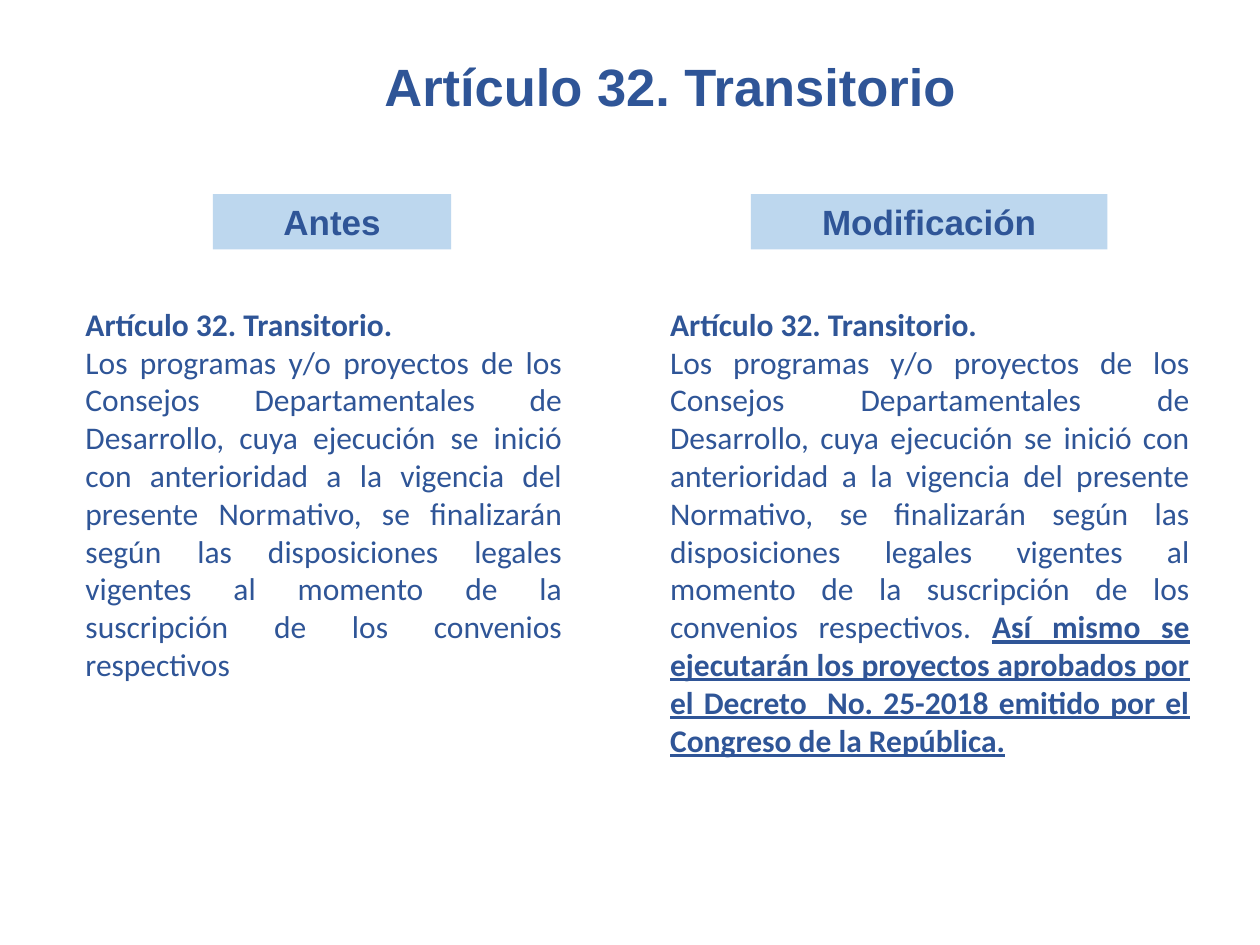
from pptx import Presentation, util as u
from pptx.dml.color import RGBColor
from pptx.enum import shapes, text

WIDTH, HEIGHT = u.Inches(10), u.Inches(7.5)
BLUE, PALE_BLUE = "2F5597", "BDD7EE"
TITLE = "Artículo 32. Transitorio"
ARTICLE = (
    "Los programas y/o proyectos de los Consejos Departamentales de Desarrollo, "
    "cuya ejecución se inició con anterioridad a la vigencia del presente Normativo, "
    "se finalizarán según las disposiciones legales vigentes al momento de la "
    "suscripción de los convenios respectivos"
)
ADDITION = (
    "Así mismo se ejecutarán los proyectos aprobados por el Decreto  No. 25-2018 "
    "emitido por el Congreso de la República."
)

# Rows, in inches: (top, height)
TITLE_ROW, LABEL_ROW = (0.38, 0.61), (1.54, 0.44)
BODY_TOP = 2.37


def color(value):
    return RGBColor.from_string(value)


def place(left, top, width, height):
    return [u.Inches(length) for length in (left, top, width, height)]


def style(para, font_name, size, align):
    para.alignment = align
    para.font.name = font_name
    para.font.size = u.Pt(size)
    para.font.color.rgb = color(BLUE)


def add_heading(box, words, size):
    """Write one centred bold line into a box."""
    frame = box.text_frame
    frame.word_wrap = True
    frame.vertical_anchor = text.MSO_ANCHOR.TOP
    para = frame.paragraphs[0]
    para.text = words
    style(para, "Arial", size, text.PP_ALIGN.CENTER)
    para.font.bold = True


def add_label(page, words, left, width):
    top, height = LABEL_ROW
    box = page.shapes.add_shape(
        shapes.MSO_SHAPE.RECTANGLE, *place(left, top, width, height))
    box.shadow.inherit = False
    box.fill.solid()
    box.fill.fore_color.rgb = color(PALE_BLUE)
    box.line.fill.background()
    add_heading(box, words, 20)


def add_article(page, left, width, height, body, addition=""):
    """Write the article's bold name, its wording and any underlined addition."""
    box = page.shapes.add_textbox(*place(left, BODY_TOP, width, height))
    frame = box.text_frame
    frame.word_wrap = True
    name, wording = frame.paragraphs[0], frame.add_paragraph()
    for para in (name, wording):
        style(para, "Calibri", 18, text.PP_ALIGN.JUSTIFY)
    name.text = TITLE + ". "
    name.font.bold = True
    wording.add_run().text = body
    if addition:
        span = wording.add_run()
        span.text = addition
        span.font.bold = span.font.underline = True


def main():
    deck = Presentation()
    deck.slide_width, deck.slide_height = WIDTH, HEIGHT
    page = deck.slides.add_slide(deck.slide_layouts[6])

    # Title
    top, height = TITLE_ROW
    title = page.shapes.add_textbox(*place(2.82, top, 5, height))
    add_heading(title, TITLE, 30)

    # Left column: before
    add_label(page, "Antes", 1.69, 1.89)
    add_article(page, 0.58, 3.98, 3.44, ARTICLE)

    # Right column: modification
    add_label(page, "Modificación", 5.96, 2.83)
    add_article(page, 5.22, 4.32, 3.86, ARTICLE + ". ", ADDITION)

    deck.save("out.pptx")


if __name__ == "__main__":
    main()
